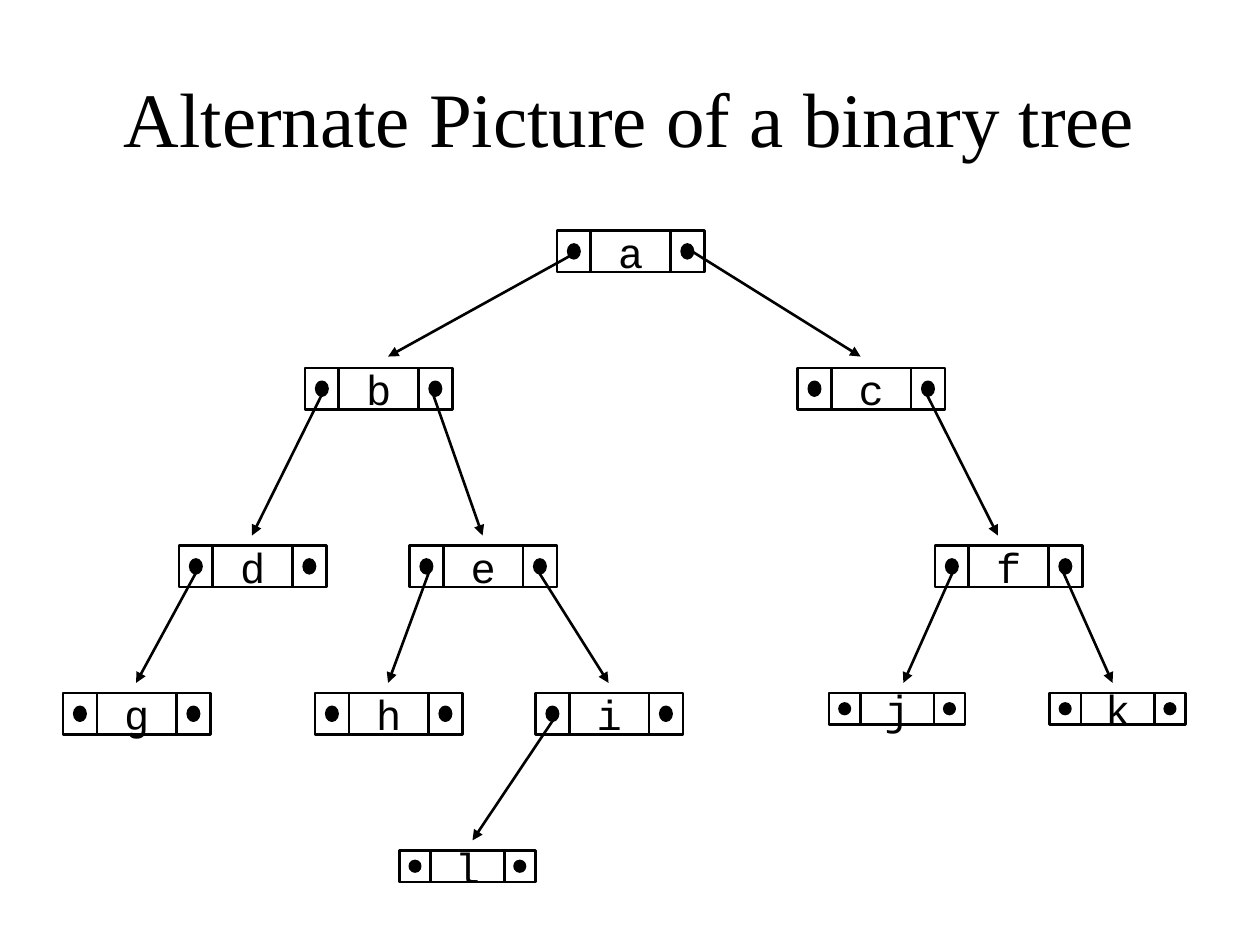
from dataclasses import dataclass

from lxml import etree
from pptx import Presentation
from pptx.dml.color import RGBColor
from pptx.enum.shapes import MSO_CONNECTOR, MSO_SHAPE
from pptx.enum.text import MSO_ANCHOR, PP_ALIGN
from pptx.oxml.ns import qn
from pptx.util import Inches, Pt

RECT = MSO_SHAPE.RECTANGLE
OVAL = MSO_SHAPE.OVAL
CELL = MSO_SHAPE.FLOWCHART_PROCESS
LINE = MSO_CONNECTOR.STRAIGHT
MIDDLE = MSO_ANCHOR.MIDDLE
CENTER = PP_ALIGN.CENTER


@dataclass(frozen=True)
class Theme:
    ink: RGBColor = RGBColor(0, 0, 0)
    head: str = "Times New Roman"
    code: str = "Courier New"
    big: Pt = Pt(44)
    small: Pt = Pt(24)
    rule: Pt = Pt(1.5)


THEME = Theme()
WIDE = (1.17, 0.33)
SLIM = (1.08, 0.25)
NODES = [
    ("a", 4.42, 1.83, WIDE),
    ("b", 2.42, 2.92, WIDE),
    ("c", 6.33, 2.92, WIDE),
    ("d", 1.42, 4.33, WIDE),
    ("e", 3.25, 4.33, WIDE),
    ("g", 0.5, 5.5, WIDE),
    ("h", 2.5, 5.5, WIDE),
    ("i", 4.25, 5.5, WIDE),
    ("l", 3.17, 6.75, SLIM),
    ("f", 7.42, 4.33, WIDE),
    ("j", 6.58, 5.5, SLIM),
    ("k", 8.33, 5.5, SLIM),
]
LEVELS = [
    (2, 2.83, [(4.58, 3.08), (5.5, 6.83)]),
    (3.08, 4.25, [(2.58, 2), (3.42, 3.83), (7.33, 7.92)]),
    (4.5, 5.42, [(1.58, 1.08), (3.42, 3.08), (4.25, 4.83),
                 (7.58, 7.17), (8.42, 8.83)]),
    (5.67, 6.67, [(4.42, 3.75)]),
]


def set_font(para, name, size):
    para.alignment = CENTER
    para.font.name = name
    para.font.size = size
    para.font.color.rgb = THEME.ink


def add_title(slide, text, left, top, width, height):
    title = slide.shapes.title
    title.left, title.top = Inches(left), Inches(top)
    title.width, title.height = Inches(width), Inches(height)
    title.text_frame.text = text
    title.text_frame.vertical_anchor = MIDDLE
    set_font(title.text_frame.paragraphs[0], THEME.head, THEME.big)


def add_part(group, kind, left, top, width, height, solid=False):
    part = group.shapes.add_shape(
        kind, Inches(left), Inches(top), Inches(width), Inches(height))
    part.shadow.inherit = False
    part.line.color.rgb = THEME.ink
    part.line.width = THEME.rule
    if solid:
        part.fill.solid()
        part.fill.fore_color.rgb = THEME.ink
    else:
        part.fill.background()
    return part


def add_node(slide, label, left, top, width, height):
    group = slide.shapes.add_group_shape()
    side = width * 0.23
    for x in (left, left + width - side):
        add_part(group, RECT, x, top, side, height)
        add_part(group, OVAL, x + side / 3, top + height / 3,
                 side / 3, height / 3, solid=True)
    cell = add_part(group, CELL, left + side, top, width - 2 * side, height)
    frame = cell.text_frame
    frame.word_wrap = False
    frame.vertical_anchor = MIDDLE
    frame.text = label
    set_font(frame.paragraphs[0], THEME.code, THEME.small)


def add_arrow(slide, x1, y1, x2, y2):
    arrow = slide.shapes.add_connector(
        LINE, Inches(x1), Inches(y1), Inches(x2), Inches(y2))
    arrow.line.color.rgb = THEME.ink
    arrow.line.width = THEME.rule
    props = arrow.line._get_or_add_ln()
    etree.SubElement(props, qn("a:tailEnd"), type="triangle")
    etree.SubElement(arrow._element.spPr, qn("a:effectLst"))


def add_tree(slide):
    for label, left, top, size in NODES:
        add_node(slide, label, left, top, *size)
    for start, end, links in LEVELS:
        for x1, x2 in links:
            add_arrow(slide, x1, start, x2, end)


def main():
    deck = Presentation()
    deck.slide_width, deck.slide_height = Inches(10), Inches(7.5)
    slide = deck.slides.add_slide(deck.slide_layouts[5])
    add_title(slide, "Alternate Picture of a binary tree", 0.5, 0.3, 9, 1.25)
    add_tree(slide)
    deck.save("out.pptx")


if __name__ == "__main__":
    main()
